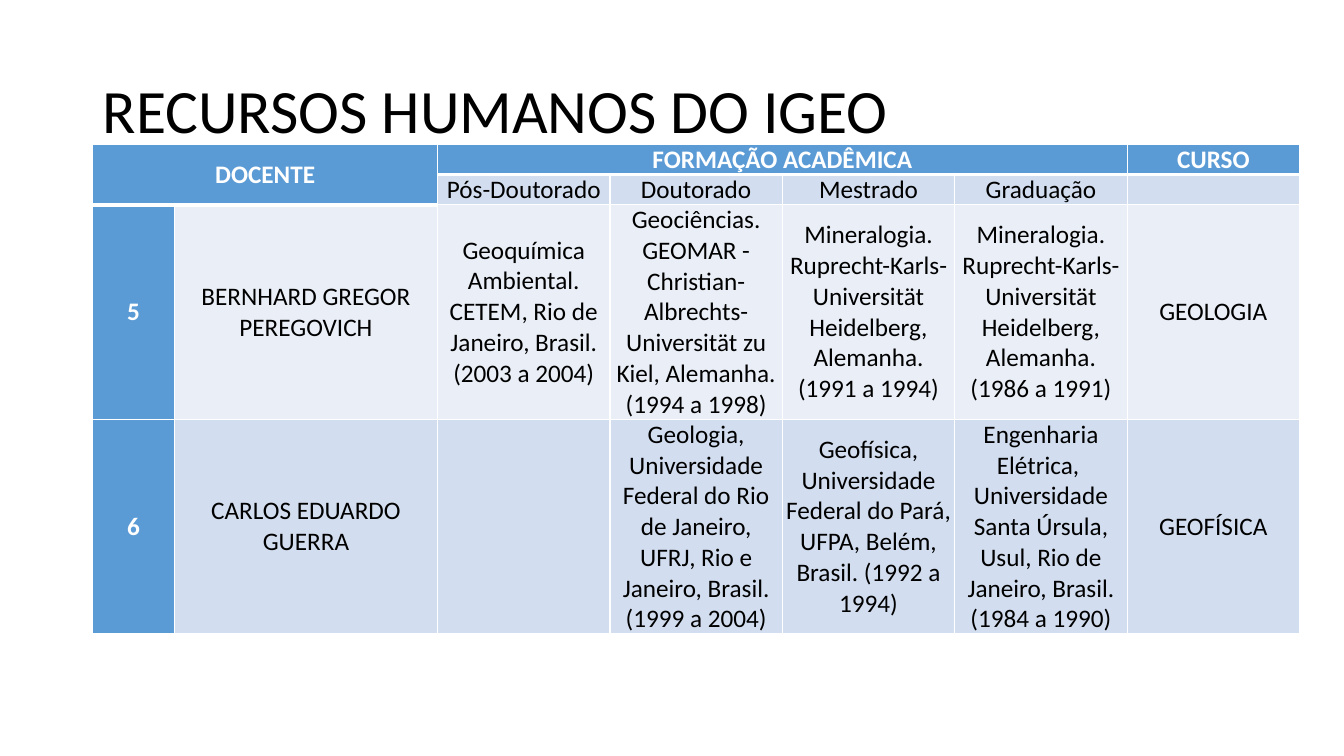
from lxml import etree
from pptx import Presentation
from pptx import util as u
from pptx.dml import color
from pptx.enum import text
from pptx.oxml import ns

PX = 9144
BLUE, BAND, LIGHT, WHITE, BLACK = "5B9BD5", "D2DEEF", "EAEFF7", "FFFFFF", "000000"


def rgb(value):
    return color.RGBColor.from_string(value)


def add_run(p, words, size, ink, bold=False):
    r = p.add_run()
    r.text = words
    r.font.name = "Calibri"
    r.font.size = u.Pt(size)
    r.font.bold = bold
    r.font.color.rgb = rgb(ink)


prs = Presentation()
prs.slide_width, prs.slide_height = 1333 * PX, 750 * PX
s = prs.slides.add_slide(prs.slide_layouts[6])

title = s.shapes.add_textbox(92 * PX, 40 * PX, 1150 * PX, 145 * PX)
tf = title.text_frame
tf.word_wrap = True
tf.vertical_anchor = text.MSO_ANCHOR.MIDDLE
p = tf.paragraphs[0]
p.line_spacing = 0.9
add_run(p, "RECURSOS HUMANOS DO IGEO", 44, BLACK)

rows = [
    ["DOCENTE", "", "FORMAÇÃO ACADÊMICA", "", "", "", "CURSO"],
    ["", "", "Pós-Doutorado", "Doutorado", "Mestrado", "Graduação", ""],
    ["5", "BERNHARD GREGOR PEREGOVICH",
     "Geoquímica Ambiental. CETEM, Rio de Janeiro, Brasil. (2003 a 2004)",
     "Geociências. GEOMAR - Christian-Albrechts-Universität zu Kiel, Alemanha. (1994 a 1998)",
     "Mineralogia. Ruprecht-Karls-Universität Heidelberg, Alemanha. (1991 a 1994)",
     "Mineralogia. Ruprecht-Karls-Universität Heidelberg, Alemanha. (1986 a 1991)",
     "GEOLOGIA"],
    ["6", "CARLOS EDUARDO GUERRA", "",
     "Geologia, Universidade Federal do Rio de Janeiro, UFRJ, Rio e Janeiro, Brasil. (1999 a 2004)",
     "Geofísica, Universidade Federal do Pará, UFPA, Belém, Brasil. (1992 a 1994)",
     "Engenharia Elétrica,  Universidade Santa Úrsula, Usul, Rio de Janeiro, Brasil. (1984 a 1990)",
     "GEOFÍSICA"],
]
widths = [81, 261] + [171] * 5
heights = [30, 30, 213, 213]

table = s.shapes.add_table(len(rows), len(widths), 92 * PX, 143 * PX,
                           sum(widths) * PX, sum(heights) * PX).table
table.first_row = table.horz_banding = False
for column, width in zip(table.columns, widths):
    column.width = width * PX
for row, height in zip(table.rows, heights):
    row.height = height * PX
table.cell(0, 0).merge(table.cell(1, 1))
table.cell(0, 2).merge(table.cell(0, 5))

for i, row in enumerate(rows):
    for j, words in enumerate(row):
        cell = table.cell(i, j)
        header = i == 0 or j == 0 or (i == 1 and j == 1)
        cell.margin_left = cell.margin_right = 2 * PX
        cell.margin_top = cell.margin_bottom = 0
        cell.vertical_anchor = text.MSO_ANCHOR.MIDDLE
        cell.fill.solid()
        cell.fill.fore_color.rgb = rgb(BLUE if header else LIGHT if i == 2 else BAND)
        p = cell.text_frame.paragraphs[0]
        p.alignment = text.PP_ALIGN.CENTER
        p.font.size = u.Pt(18)
        if words:
            add_run(p, words, 18, WHITE if header else BLACK, header)
        tcPr = cell._tc.get_or_add_tcPr()
        for k, side in enumerate("LRTB"):
            thick = side == "B" and (i == 0 or (i == 1 and j < 2))
            ln = etree.Element(ns.qn("a:ln" + side), w=str(u.Pt(3 if thick else 1)))
            fill = etree.SubElement(ln, ns.qn("a:solidFill"))
            etree.SubElement(fill, ns.qn("a:srgbClr"), val=WHITE)
            tcPr.insert(k, ln)

prs.save("out.pptx")
